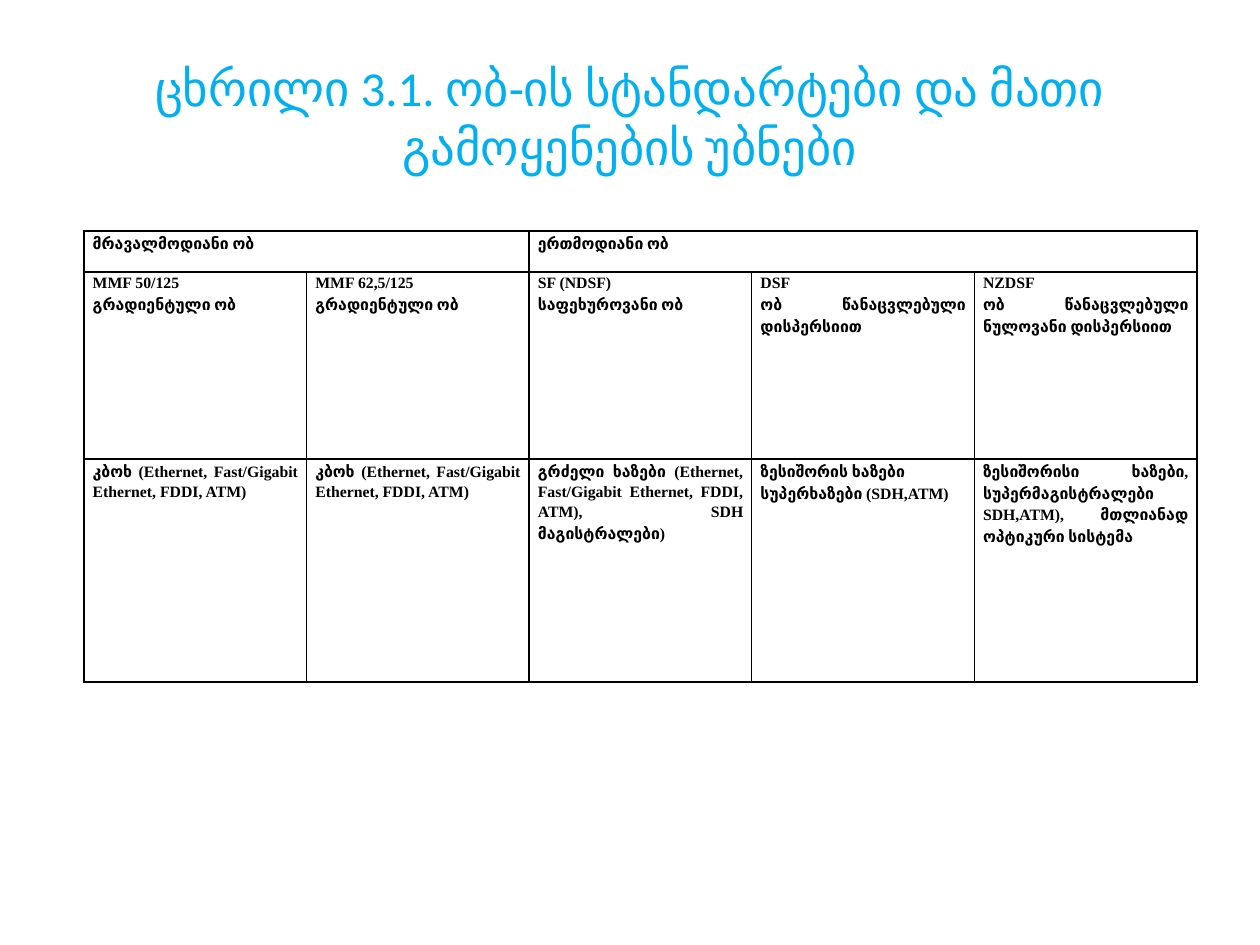
import pptx
import pptx.util
import pptx.dml.color
import pptx.enum.text
import pptx.oxml
import pptx.oxml.ns

Pt = pptx.util.Pt
ALIGN = pptx.enum.text.PP_ALIGN
ANCHOR = pptx.enum.text.MSO_ANCHOR
BLACK = pptx.dml.color.RGBColor(0, 0, 0)
BLUE = pptx.dml.color.RGBColor(0x00, 0xB0, 0xF0)

USES = " (Ethernet, Fast/Gigabit Ethernet, FDDI, ATM)"
LOCAL = [["კბოხ", USES]]
GRADED = ["გრადიენტული ობ"]
HEADS = [(0, 1, "მრავალმოდიანი ობ"), (2, 4, "ერთმოდიანი ობ")]
TYPES = [
    [["MMF 50/125"], GRADED],
    [["MMF 62,5/125"], GRADED],
    [["SF (NDSF)"], ["საფეხუროვანი ობ"]],
    [["DSF"], ["ობ წანაცვლებული დისპერსიით"]],
    [["NZDSF"], ["ობ წანაცვლებული ნულოვანი დისპერსიით"]],
]
AREAS = [
    LOCAL,
    LOCAL,
    [["გრძელი ხაზები", USES + ", SDH ", "მაგისტრალები", ")"]],
    [["ზესიშორის ხაზები"], ["სუპერხაზები", " (SDH,ATM)"]],
    [["ზესიშორისი ხაზები", ",", "\n", "სუპერმაგისტრალები ",
      "SDH,ATM), ", "მთლიანად ოპტიკური სისტემა"]],
]


def add_run(para, text, size, font, color, bold=False):
    run = para.add_run()
    run.text = text
    run.font.size = Pt(size)
    run.font.name = font
    run.font.bold = bold
    run.font.color.rgb = color


def add_title(slide, left, top, width, height):
    box = slide.shapes.add_textbox(Pt(left), Pt(top), Pt(width), Pt(height))
    frame = box.text_frame
    frame.word_wrap = True
    frame.vertical_anchor = ANCHOR.MIDDLE
    para = frame.paragraphs[0]
    para.alignment = ALIGN.CENTER
    add_run(para, "ცხრილი 3.1. ობ-ის სტანდარტები და მათი გამოყენების უბნები",
            27.9, "Calibri", BLUE)


def style_cell(cell):
    cell.margin_left = cell.margin_right = Pt(5)
    cell.margin_top = cell.margin_bottom = Pt(0)
    props = cell._tc.get_or_add_tcPr()
    for side in ("lnL", "lnR", "lnT", "lnB"):
        props.append(pptx.oxml.parse_xml(
            f'<a:{side} {pptx.oxml.ns.nsdecls("a")} w="{Pt(1)}"><a:solidFill>'
            f'<a:srgbClr val="{BLACK}"/></a:solidFill></a:{side}>'))
    cell.fill.background()


def fill_cell(cell, paras):
    frame = cell.text_frame
    for i, runs in enumerate(paras):
        para = frame.add_paragraph() if i else frame.paragraphs[0]
        para.alignment = ALIGN.JUSTIFY
        para.line_spacing = 1.15
        for text in runs:
            if text == "\n":
                para.add_line_break()
            else:
                font = "Times New Roman" if text.isascii() else "Lato"
                add_run(para, text, 9, font, BLACK, True)


def add_grid(slide, left, top, width, heights):
    count = len(TYPES)
    table = slide.shapes.add_table(len(heights), count, Pt(left), Pt(top),
                                   Pt(width), Pt(sum(heights))).table
    table.first_row = table.horz_banding = False
    for col in table.columns:
        col.width = Pt(width / count)
    for row, height in zip(table.rows, heights):
        row.height = Pt(height)
    for cell in table.iter_cells():
        style_cell(cell)
    for first, last, text in HEADS:
        table.cell(0, first).merge(table.cell(0, last))
        fill_cell(table.cell(0, first), [[text]])
    for r, cells in enumerate((TYPES, AREAS), 1):
        for c, paras in enumerate(cells):
            fill_cell(table.cell(r, c), paras)


def main():
    deck = pptx.Presentation()
    deck.slide_width, deck.slide_height = Pt(720), Pt(540)
    slide = deck.slides.add_slide(deck.slide_layouts[6])
    add_title(slide, 36, 21.6, 648, 90)
    add_grid(slide, 48, 132, 636, [23.5, 106.8, 127.5])
    deck.save("out.pptx")


if __name__ == "__main__":
    main()
